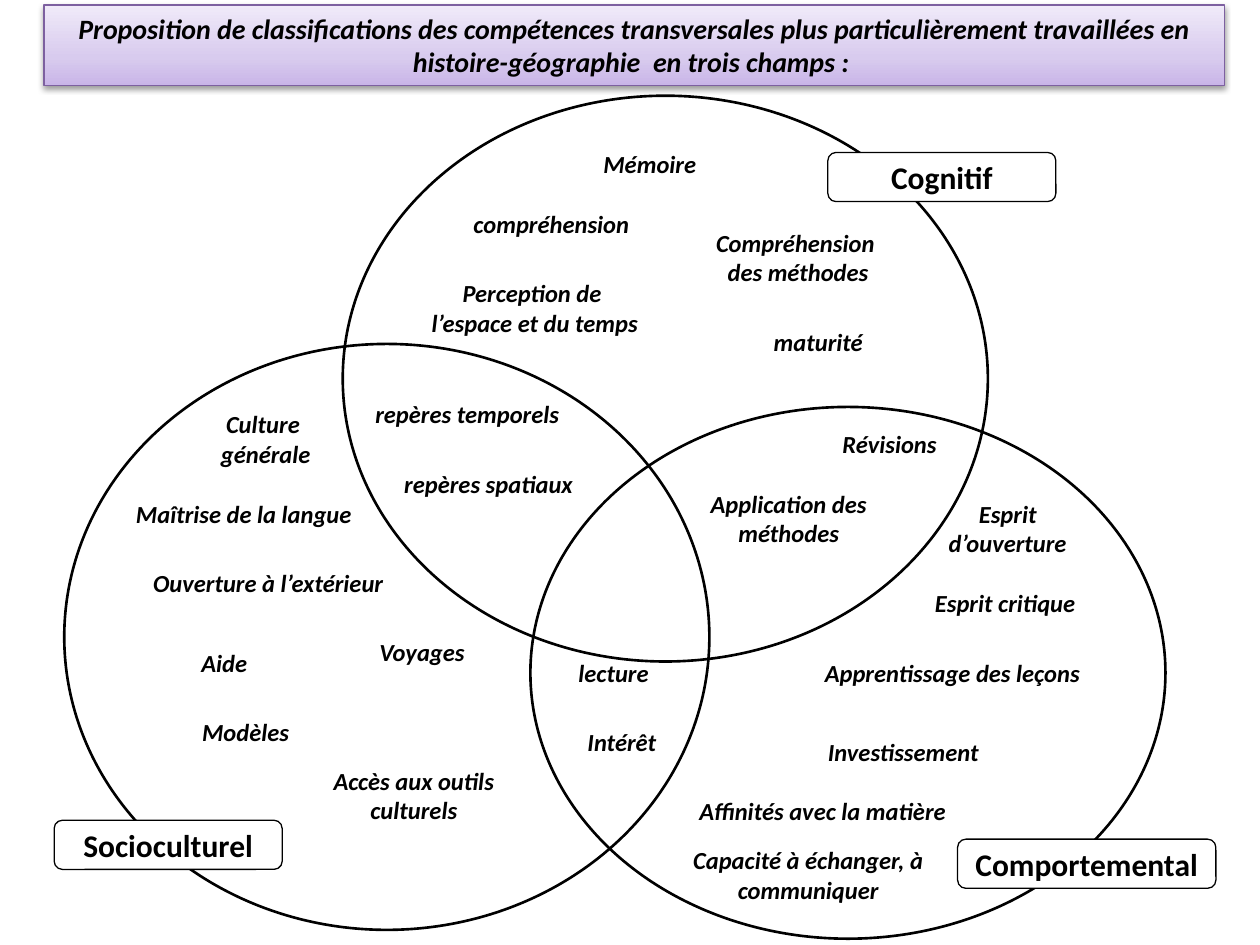
from copy import deepcopy
from dataclasses import dataclass

from lxml.etree import SubElement
from pptx import Presentation
from pptx.dml.color import RGBColor as Color
from pptx.enum.shapes import MSO_SHAPE as Preset
from pptx.enum.text import MSO_ANCHOR as Anchor, MSO_AUTO_SIZE as AutoSize, PP_ALIGN as Align
from pptx.oxml.ns import qn
from pptx.util import Inches, Pt


@dataclass(frozen=True)
class Theme:
    font: str = "Calibri"
    ink: str = "000000"
    paper: str = "FFFFFF"
    banner_line: str = "7D60A0"
    banner_stops: tuple = ((0, "C9B5E8"), (0.35, "D8CBEE"), (1, "F0EAF9"))
    title_size: int = 16
    label_size: int = 18
    skill_size: int = 14
    circle_width: float = 1.5
    thin_width: float = 0.75


CIRCLES = [
    (0.51, 2.73, 5.12, 4.65),
    (2.72, 0.76, 5.12, 4.49),
    (4.21, 3.23, 5.04, 4.22),
]

FIELDS = [
    ("Cognitif", 6.57, 1.21, 1.81),
    ("Socioculturel", 0.43, 6.51, 1.81),
    ("Comportemental", 7.6, 6.66, 2.05),
]

LEFT_SKILLS = [
    ("Mémoire", 4.69, 1.13, 1),
    ("repères temporels", 2.88, 3.12, 1.88),
    ("repères spatiaux", 3.11, 3.67, 1.74),
    ("compréhension", 3.66, 1.61, 1.64),
    ("Maîtrise de la langue", 0.98, 3.91, 2.11),
]

CENTRED_SKILLS = [
    ("Perception de \nl’espace et du temps", 3.19, 2.16, 2.11),
    ("Culture \ngénérale", 1.61, 3.2, 1),
    ("Esprit \nd’ouverture ", 7.36, 3.91, 1.32),
    ("Apprentissage des leçons", 6.26, 5.17, 2.6),
    ("Compréhension \ndes méthodes", 5.47, 1.76, 1.73),
    ("Révisions", 6.5, 3.36, 1.12),
    ("Investissement", 6.37, 5.8, 1.6),
    ("Affinités avec la matière", 5.32, 6.27, 2.42),
    ("Aide", 1.47, 5.09, 0.62),
    ("lecture", 4.45, 5.17, 0.84),
    ("Intérêt", 4.54, 5.72, 0.79),
    ("Modèles", 1.46, 5.64, 0.98),
    ("maturité", 6.01, 2.55, 0.97),
    ("Voyages", 2.85, 5.01, 1),
]

WRAPPED_SKILLS = [
    ("Esprit critique ", 7.21, 4.62, 1.58, 0.33),
    ("Ouverture à l’extérieur", 0.75, 4.46, 2.76, 0.33),
    ("Application des méthodes", 5.32, 3.83, 1.88, 0.57),
    ("Capacité à échanger, à communiquer", 5.32, 6.66, 2.19, 0.57),
    ("Accès aux outils culturels", 2.25, 6.03, 2.07, 0.57),
]

TITLE = (
    "Proposition de classifications des compétences transversales "
    "plus particulièrement travaillées en histoire-géographie  en trois champs : "
)


class VennSlide:
    def __init__(self, presentation, theme):
        self.theme = theme
        self.slide = presentation.slides.add_slide(presentation.slide_layouts[6])

    def outline(self, preset, box, color, width):
        shape = self.slide.shapes.add_shape(preset, *map(Inches, box))
        shape.shadow.inherit = False
        shape.line.color.rgb = Color.from_string(color)
        shape.line.width = Pt(width)
        return shape

    def label(self, shape, text, size, align=Align.CENTER, italic=True, **frame_format):
        frame = shape.text_frame
        frame.text = text
        for name, value in frame_format.items():
            setattr(frame, name, value)
        font_format = {"name": self.theme.font, "size": Pt(size), "bold": True, "italic": italic}
        for paragraph in frame.paragraphs:
            paragraph.alignment = align
            for run in paragraph.runs:
                for name, value in font_format.items():
                    setattr(run.font, name, value)
                run.font.color.rgb = Color.from_string(self.theme.ink)

    def circle(self, box):
        shape = self.outline(Preset.OVAL, box, self.theme.ink, self.theme.circle_width)
        shape.fill.background()

    def field(self, text, left, top, width):
        box = (left, top, width, 0.39)
        shape = self.outline(Preset.ROUNDED_RECTANGLE, box, self.theme.ink, self.theme.thin_width)
        shape.fill.solid()
        shape.fill.fore_color.rgb = Color.from_string(self.theme.paper)
        self.label(shape, text, self.theme.label_size, italic=False,
                   word_wrap=False, vertical_anchor=Anchor.MIDDLE)

    def skill(self, text, left, top, width, height=None, align=Align.CENTER, wrap=False):
        height = height or (0.57 if "\n" in text else 0.33)
        shape = self.slide.shapes.add_textbox(*map(Inches, (left, top, width, height)))
        self.label(shape, text, self.theme.skill_size, align,
                   word_wrap=wrap, auto_size=AutoSize.SHAPE_TO_FIT_TEXT)

    def banner(self, text, box):
        shape = self.outline(Preset.RECTANGLE, box, self.theme.banner_line, self.theme.thin_width)
        shape.fill.gradient()
        shape.fill.gradient_angle = 90
        properties = shape._element.spPr
        stop_list = properties.find(qn("a:gradFill")).find(qn("a:gsLst"))
        stop_list.insert(1, deepcopy(stop_list[0]))
        for stop, (position, color) in zip(shape.fill.gradient_stops, self.theme.banner_stops):
            stop.position = position
            stop.color.rgb = Color.from_string(color)
        shadow = SubElement(properties.find(qn("a:effectLst")), qn("a:outerShdw"),
                            blurRad="40000", dist="20000", dir="5400000", rotWithShape="0")
        shade = SubElement(shadow, qn("a:srgbClr"), val=self.theme.ink)
        SubElement(shade, qn("a:alpha"), val="38000")
        self.label(shape, text, self.theme.title_size, word_wrap=True,
                   vertical_anchor=Anchor.TOP, auto_size=AutoSize.SHAPE_TO_FIT_TEXT)


def main():
    presentation = Presentation()
    presentation.slide_width = Inches(10)
    presentation.slide_height = Inches(7.5)
    venn = VennSlide(presentation, Theme())
    for box in CIRCLES:
        venn.circle(box)
    for field in FIELDS:
        venn.field(*field)
    for skill in LEFT_SKILLS:
        venn.skill(*skill, align=Align.LEFT)
    for skill in CENTRED_SKILLS:
        venn.skill(*skill)
    for skill in WRAPPED_SKILLS:
        venn.skill(*skill, wrap=True)
    venn.banner(TITLE, (0.35, 0.04, 9.37, 0.64))
    presentation.save("out.pptx")


if __name__ == "__main__":
    main()
